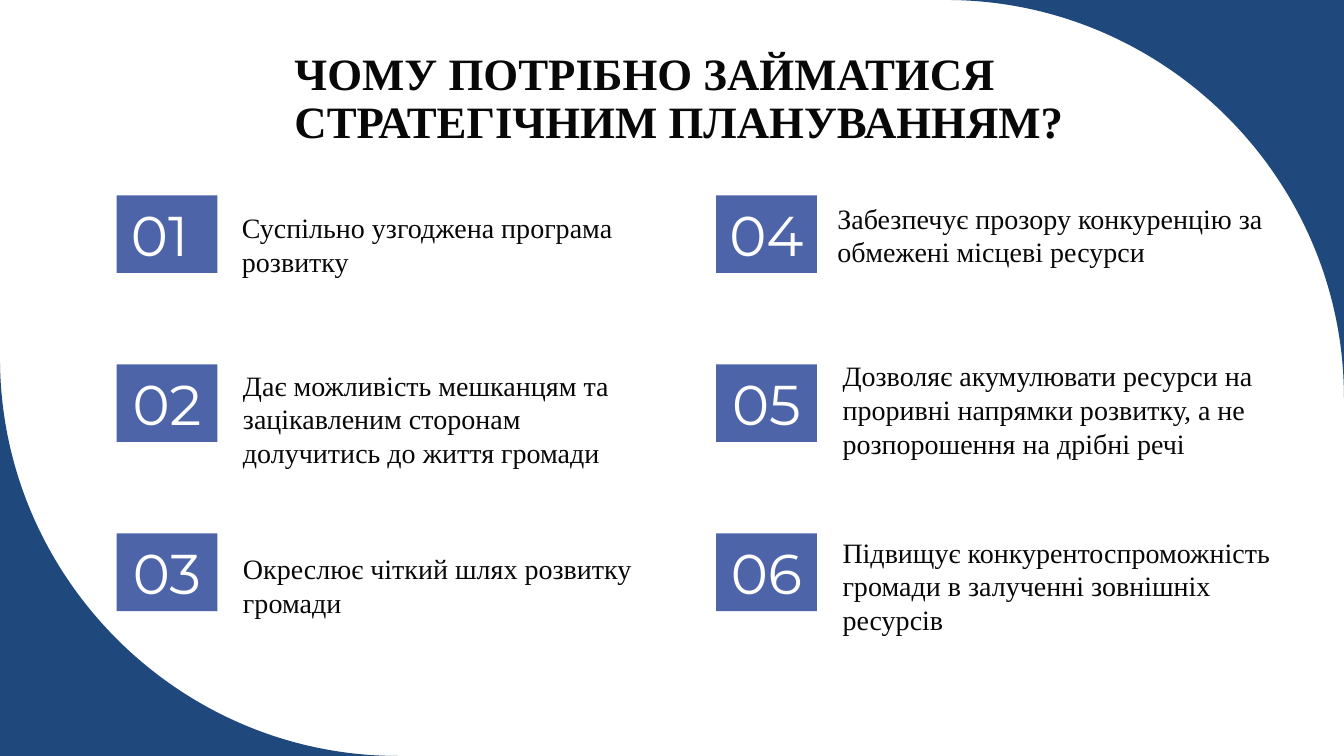
from lxml.etree import SubElement
from pptx import Presentation
from pptx.dml.color import RGBColor
from pptx.enum.shapes import MSO_SHAPE
from pptx.enum.text import MSO_ANCHOR, PP_ALIGN
from pptx.oxml.ns import qn
from pptx.util import Pt

EMU_PER_PX = 9525
PAGE_WIDTH, PAGE_HEIGHT = 1280, 720
CORNER_RADIUS = 379
ARC_PULL = 0.55
COLUMN_LEFTS = (111, 682)
FIRST_ROW_TOP, ROW_PITCH = 186, 161
BADGE_WIDTH, BADGE_HEIGHT = 96, 74
NAVY, INDIGO, WHITE, BLACK = "1F497D", "4D64A9", "FFFFFF", "080808"

TITLE = "ЧОМУ ПОТРІБНО ЗАЙМАТИСЯ СТРАТЕГІЧНИМ ПЛАНУВАННЯМ?"
REASONS = (
    ("Суспільно узгоджена програма розвитку", 110, 10, 444, 74),
    ("Дає можливість мешканцям та зацікавленим сторонам долучитись до життя громади",
     111, -1, 393, 107),
    ("Окреслює чіткий шлях розвитку громади", 111, 13, 472, 74),
    ("Забезпечує прозору конкуренцію за обмежені місцеві ресурси", 106, 1, 470, 74),
    ("Дозволяє акумулювати ресурси на проривні напрямки розвитку, "
     "а не розпорошення на дрібні речі", 111, -10, 413, 107),
    ("Підвищує конкурентоспроможність громади в залученні зовнішніх ресурсів",
     111, -3, 472, 107),
)


def px(length):
    """Turn pixels into EMU."""
    return round(length * EMU_PER_PX)


def color(value):
    """Turn a hex string into a colour."""
    return RGBColor.from_string(value)


def paint(shape, fill):
    """Give a shape a plain fill without outline or shadow."""
    shape.shadow.inherit = False
    shape.fill.solid()
    shape.fill.fore_color.rgb = color(fill)
    shape.line.fill.background()


def write(para, text, font, size, ink, bold=False):
    """Add one formatted run to a paragraph."""
    span = para.add_run()
    span.text = text
    span.font.name = font
    span.font.size = Pt(size)
    span.font.bold = bold
    span.font.color.rgb = color(ink)


def add_text_box(page, left, top, width, height):
    """Add an empty wrapping text box and return its frame."""
    box = page.shapes.add_textbox(px(left), px(top), px(width), px(height))
    box.text_frame.word_wrap = True
    return box.text_frame


def pull(point, corner):
    """Return the curve handle that leads from an arc end towards the corner."""
    return tuple(start + ARC_PULL * (end - start) for start, end in zip(point, corner))


def add_corner(page, corner, arc_start, arc_end):
    """Fill the space between a page corner and a quarter circle."""
    builder = page.shapes.build_freeform(px(corner[0]), px(corner[1]))
    builder.add_line_segments(
        [(px(x), px(y)) for x, y in (arc_start, arc_end)], close=True)
    shape = builder.convert_to_shape()
    paint(shape, NAVY)
    chord = list(shape.element.iter(qn("a:lnTo")))[1]
    curve = chord.makeelement(qn("a:cubicBezTo"))
    for x, y in (pull(arc_start, corner), pull(arc_end, corner), arc_end):
        SubElement(curve, qn("a:pt"), x=str(px(x) - shape.left), y=str(px(y) - shape.top))
    chord.getparent().replace(chord, curve)


def add_title(page, left, top, width, height):
    """Add the slide heading."""
    frame = add_text_box(page, left, top, width, height)
    frame.vertical_anchor = MSO_ANCHOR.MIDDLE
    para = frame.paragraphs[0]
    para.line_spacing = 0.9
    write(para, TITLE, "Times New Roman", 32, BLACK, bold=True)


def add_reason(page, left, top, number, reason):
    """Add a numbered badge and the reason beside it."""
    wording, offset_x, offset_y, width, height = reason
    badge = page.shapes.add_shape(
        MSO_SHAPE.RECTANGLE, px(left), px(top), px(BADGE_WIDTH), px(BADGE_HEIGHT))
    paint(badge, INDIGO)
    badge.text_frame.word_wrap = True
    para = badge.text_frame.paragraphs[0]
    para.alignment = PP_ALIGN.CENTER
    write(para, f"{number:02d} ", "Montserrat", 40, WHITE)
    frame = add_text_box(page, left + offset_x, top + offset_y, width, height)
    write(frame.paragraphs[0], wording, "Times New Roman", 20, BLACK)


def main():
    """Build and save the deck."""
    deck = Presentation()
    deck.slide_width, deck.slide_height = px(PAGE_WIDTH), px(PAGE_HEIGHT)
    page = deck.slides.add_slide(deck.slide_layouts[6])
    add_corner(page, (PAGE_WIDTH, 0),
               (PAGE_WIDTH - CORNER_RADIUS, 0), (PAGE_WIDTH, CORNER_RADIUS))
    add_corner(page, (0, PAGE_HEIGHT),
               (CORNER_RADIUS, PAGE_HEIGHT), (0, PAGE_HEIGHT - CORNER_RADIUS))
    add_title(page, 271, 47, 944, 96)
    for index, reason in enumerate(REASONS):
        column, row = divmod(index, 3)
        add_reason(page, COLUMN_LEFTS[column], FIRST_ROW_TOP + row * ROW_PITCH,
                   index + 1, reason)
    deck.save("out.pptx")


if __name__ == "__main__":
    main()
